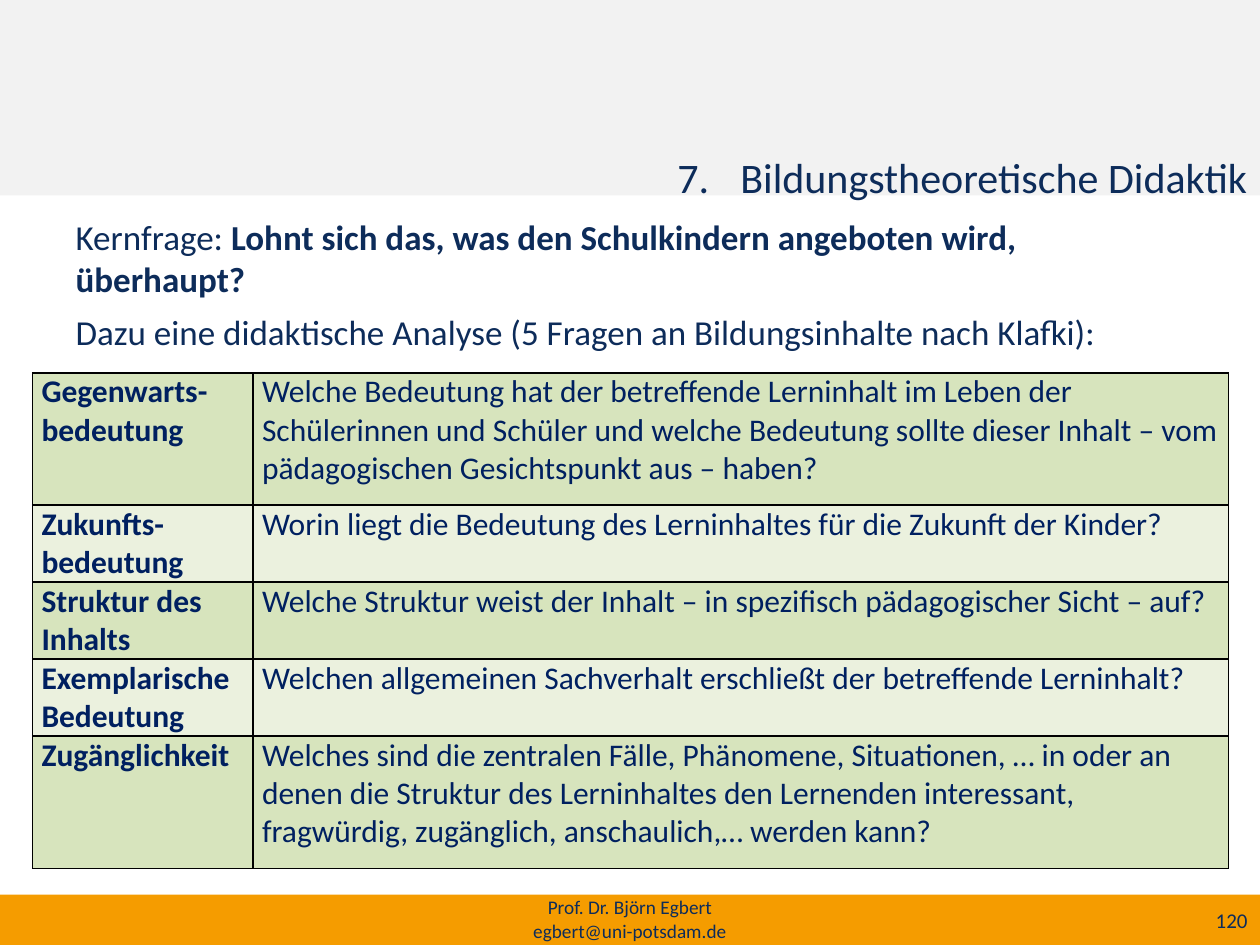
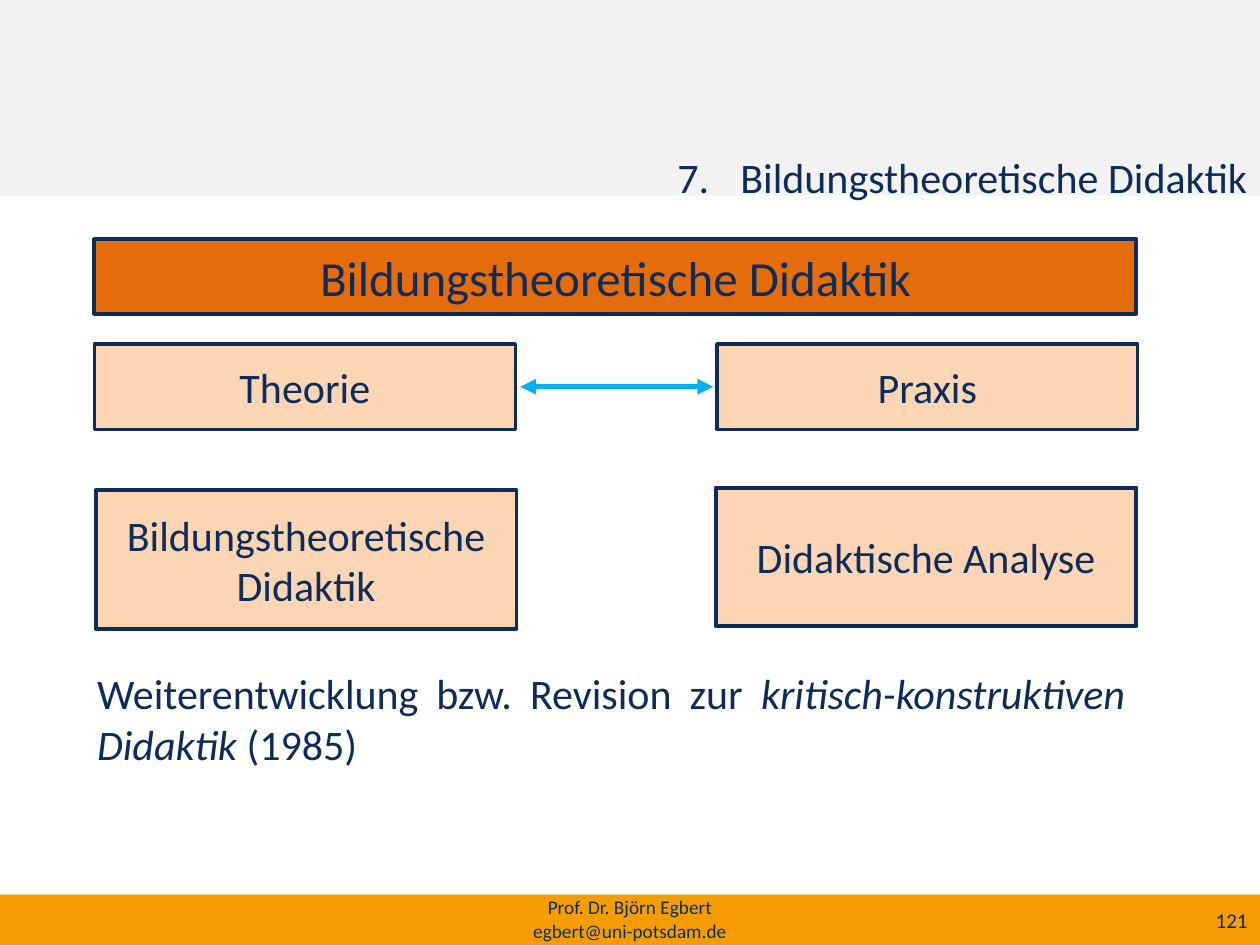
from dataclasses import dataclass

from lxml import etree
from pptx import Presentation
from pptx.dml.color import RGBColor
from pptx.enum.shapes import MSO_CONNECTOR, MSO_SHAPE
from pptx.enum.text import MSO_ANCHOR, MSO_AUTO_SIZE, PP_ALIGN
from pptx.oxml.ns import qn
from pptx.util import Inches, Pt

RECT = MSO_SHAPE.RECTANGLE
STRAIGHT = MSO_CONNECTOR.STRAIGHT
LEFT, CENTER = PP_ALIGN.LEFT, PP_ALIGN.CENTER
RIGHT, JUSTIFY = PP_ALIGN.RIGHT, PP_ALIGN.JUSTIFY
TOP, MIDDLE = MSO_ANCHOR.TOP, MSO_ANCHOR.MIDDLE
NO_FIT, GROW = MSO_AUTO_SIZE.NONE, MSO_AUTO_SIZE.SHAPE_TO_FIT_TEXT

FONT = "Calibri"
NAVY, INK = "0D2C5A", "002060"
GREY, AMBER = "F2F2F2", "F59C00"
ORANGE, PEACH = "E46C0A", "FCD5B5"
GREEN, PALE = "D7E4BD", "EBF1DE"
BLUE, BLACK = "00B0F0", "000000"

TITLE = "Bildungstheoretische Didaktik"


@dataclass
class Run:
    text: str
    bold: bool = False
    italic: bool = False


@dataclass
class Box:
    left: float
    top: float
    width: float
    height: float
    fill: str
    text: str = ""
    size: float = 24
    line: float = 0


BANDS = [Box(0, 0, 10, 1.55, GREY), Box(0, 7.1, 10, 0.4, AMBER)]

BOXES = [
    Box(0.75, 1.9, 8.27, 0.59, ORANGE, TITLE, 28, 2.25),
    Box(0.75, 2.73, 3.34, 0.68, PEACH, "Theorie", line=2),
    Box(5.69, 2.73, 3.34, 0.68, PEACH, "Praxis", line=2),
    Box(0.76, 3.89, 3.34, 1.1, PEACH, TITLE, line=2.25),
    Box(5.68, 3.87, 3.34, 1.1, PEACH, "Didaktische Analyse", line=2.25),
]

ROWS = [
    (1.05, "Gegenwarts-bedeutung",
     "Welche Bedeutung hat der betreffende Lerninhalt im Leben der Schülerinnen "
     "und Schüler und welche Bedeutung sollte dieser Inhalt – vom pädagogischen "
     "Gesichtspunkt aus – haben?"),
    (0.61, "Zukunfts-bedeutung",
     "Worin liegt die Bedeutung des Lerninhaltes für die Zukunft der Kinder?"),
    (0.61, "Struktur des Inhalts",
     "Welche Struktur weist der Inhalt – in spezifisch pädagogischer Sicht – auf?"),
    (0.61, "Exemplarische Bedeutung",
     "Welchen allgemeinen Sachverhalt erschließt der betreffende Lerninhalt?"),
    (1.05, "Zugänglichkeit",
     "Welches sind die zentralen Fälle, Phänomene, Situationen, … in oder an denen "
     "die Struktur des Lerninhaltes den Lernenden interessant, fragwürdig, "
     "zugänglich, anschaulich,… werden kann?"),
]
COLS = [1.75, 7.74]


def color(code: str) -> RGBColor:
    return RGBColor.from_string(code)


def write(par, runs: list[Run], size: float, ink: str = NAVY, align=LEFT) -> None:
    par.alignment = align
    for part in runs:
        run = par.add_run()
        run.text = part.text
        font = run.font
        font.name, font.size = FONT, Pt(size)
        font.bold, font.italic = part.bold, part.italic
        font.color.rgb = color(ink)


def indent(par, left: float, first: float, start: int = 0) -> None:
    """Set the indents, with a number if start is given, else no bullet."""
    props = par._p.get_or_add_pPr()
    props.set("marL", str(Inches(left)))
    props.set("indent", str(Inches(first)))
    if start:
        etree.SubElement(props, qn("a:buFont"), typeface="+mj-lt")
        etree.SubElement(props, qn("a:buAutoNum"), type="arabicPeriod",
                         startAt=str(start))
    else:
        etree.SubElement(props, qn("a:buNone"))


def place(shape, left: float, top: float, width: float, height: float):
    """Move a placeholder and return its text frame."""
    shape.left, shape.top = Inches(left), Inches(top)
    shape.width, shape.height = Inches(width), Inches(height)
    frame = shape.text_frame
    frame.auto_size, frame.vertical_anchor = NO_FIT, TOP
    frame.word_wrap = True
    return frame


def label(slide, left: float, top: float, width: float, height: float):
    return slide.shapes.add_textbox(
        Inches(left), Inches(top), Inches(width), Inches(height)).text_frame


def draw(slide, box: Box):
    shape = slide.shapes.add_shape(
        RECT, Inches(box.left), Inches(box.top),
        Inches(box.width), Inches(box.height))
    shape.shadow.inherit = False
    shape.fill.solid()
    shape.fill.fore_color.rgb = color(box.fill)
    if box.line:
        shape.line.color.rgb = color(NAVY)
        shape.line.width = Pt(box.line)
    else:
        shape.line.fill.background()
    if box.text:
        write(shape.text_frame.paragraphs[0], [Run(box.text)], box.size,
              align=CENTER)
    return shape


def add_bands(slide) -> None:
    """Draw the bands and hand them to the layout, behind its placeholders."""
    first = slide.slide_layout.placeholders[0].element
    for num, band in enumerate(BANDS, 20):
        item = draw(slide, band).element
        item.nvSpPr.cNvPr.set("id", str(num))
        first.addprevious(item)


def add_frame(slide, number: int) -> None:
    """Fill in the title, the footer and the page number."""
    par = place(slide.shapes.title, 1, 1.15, 9, 0.71).paragraphs[0]
    indent(par, 0.5, -0.5, start=7)
    write(par, [Run(TITLE)], 24, align=RIGHT)

    foot = label(slide, 4.13, 7.06, 1.74, 0.47)
    foot.word_wrap, foot.auto_size = False, GROW
    par = foot.paragraphs[0]
    write(par, [Run("Prof. Dr. Björn Egbert")], 11, align=CENTER)
    par.add_line_break()
    write(par, [Run("egbert@uni-potsdam.de")], 11, align=CENTER)

    page = label(slide, 7.75, 7.1, 2.25, 0.4)
    page.word_wrap, page.vertical_anchor = True, MIDDLE
    write(page.paragraphs[0], [Run(str(number))], 12, align=RIGHT)


def set_cell(cell, run: Run, fill: str) -> None:
    cell.margin_left = cell.margin_right = Inches(0.07)
    cell.margin_top = cell.margin_bottom = 0
    cell.fill.solid()
    cell.fill.fore_color.rgb = color(fill)
    write(cell.text_frame.paragraphs[0], [run], 18, INK)
    props = cell._tc.get_or_add_tcPr()
    for spot, side in enumerate(("lnL", "lnR", "lnT", "lnB")):
        edge = etree.Element(qn(f"a:{side}"), w=str(Pt(1)))
        paint = etree.SubElement(edge, qn("a:solidFill"))
        etree.SubElement(paint, qn("a:srgbClr"), val=BLACK)
        props.insert(spot, edge)


def add_grid(slide) -> None:
    high = sum(row[0] for row in ROWS)
    grid = slide.shapes.add_table(
        len(ROWS), len(COLS), Inches(0.26), Inches(2.96),
        Inches(sum(COLS)), Inches(high)).table
    grid.first_row = grid.horz_banding = False
    for col, width in zip(grid.columns, COLS):
        col.width = Inches(width)
    for num, (height, term, ask) in enumerate(ROWS):
        grid.rows[num].height = Inches(height)
        fill = PALE if num % 2 else GREEN
        set_cell(grid.cell(num, 0), Run(term, bold=True), fill)
        set_cell(grid.cell(num, 1), Run(ask), fill)


def add_arrow(slide, left: float, right: float, top: float) -> None:
    arrow = slide.shapes.add_connector(
        STRAIGHT, Inches(left), Inches(top), Inches(right), Inches(top))
    arrow.line.color.rgb = color(BLUE)
    arrow.line.width = Pt(3)
    line = arrow.line._get_or_add_ln()
    for end in ("headEnd", "tailEnd"):
        etree.SubElement(line, qn(f"a:{end}"), type="triangle")
    etree.SubElement(arrow.element.spPr, qn("a:effectLst"))


def main() -> None:
    prs = Presentation()
    prs.slide_width, prs.slide_height = Inches(10), Inches(7.5)
    layout = prs.slide_layouts[1]

    # Key question and table of five questions
    slide = prs.slides.add_slide(layout)
    add_bands(slide)
    body = place(slide.placeholders[1], 0.5, 1.66, 8.91, 5)
    par = body.paragraphs[0]
    indent(par, 0, 0)
    par.space_before = Pt(0)
    write(par, [Run("Kernfrage: "),
                Run("Lohnt sich das, was den Schulkindern angeboten wird, "
                    "überhaupt?", bold=True)], 20)
    par = body.add_paragraph()
    indent(par, 0, 0)
    par.space_before = par.space_after = Pt(6)
    write(par, [Run("Dazu eine didaktische Analyse (5 Fragen an "
                    "Bildungsinhalte nach Klafki):")], 20)
    add_grid(slide)
    add_frame(slide, 120)

    # Theory and practice
    slide = prs.slides.add_slide(layout)
    body = place(slide.placeholders[1], 0.67, 5.25, 8.36, 1.22)
    par = body.paragraphs[0]
    indent(par, 0, 0)
    par.space_before = Pt(0)
    write(par, [Run("Weiterentwicklung bzw. Revision zur "),
                Run("kritisch-konstruktiven Didaktik ", italic=True),
                Run("(1985)")], 24, align=JUSTIFY)
    add_arrow(slide, 4.13, 5.66, 3.07)
    for box in BOXES:
        draw(slide, box)
    add_frame(slide, 121)

    prs.save("out.pptx")


if __name__ == "__main__":
    main()
